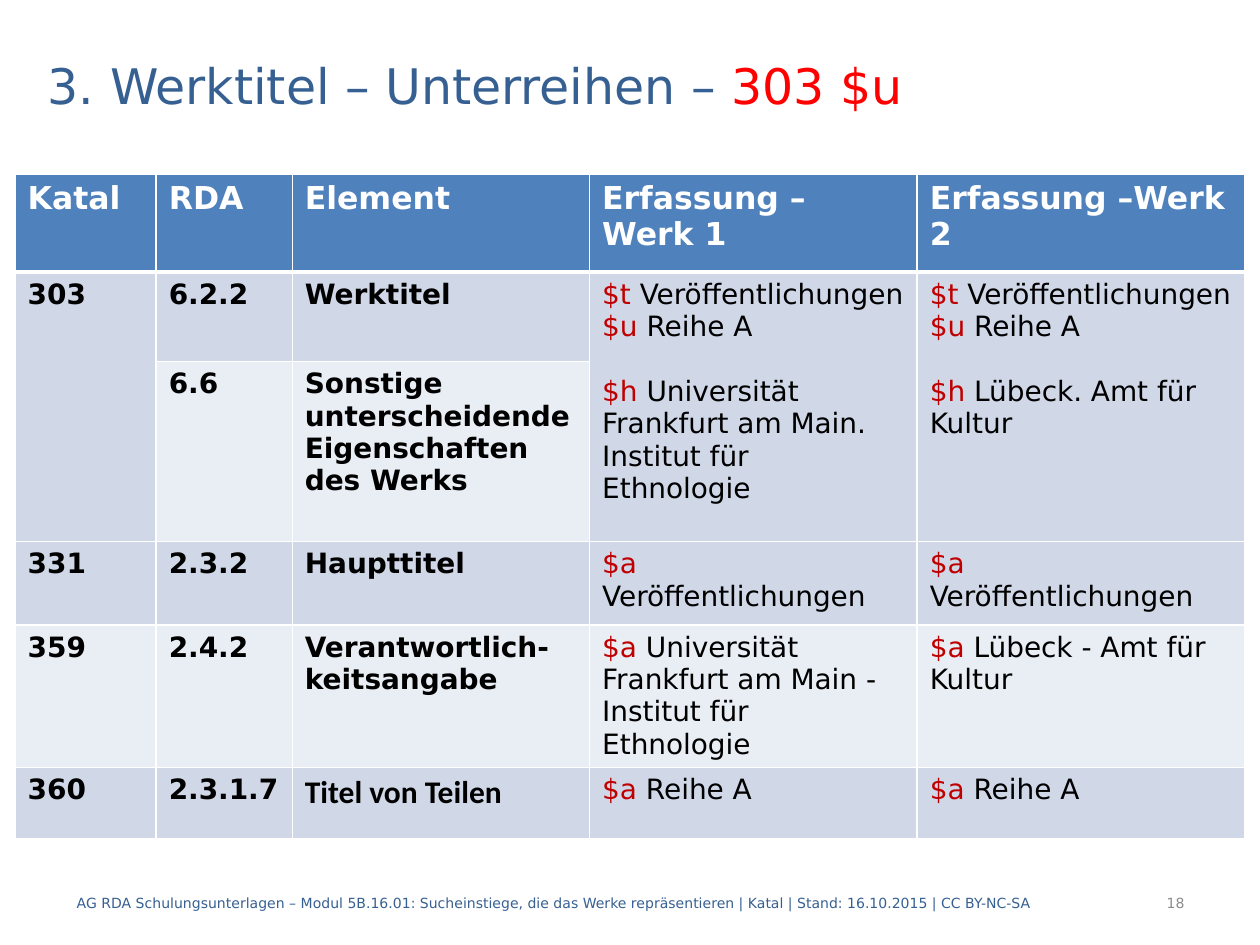
"""Build the slide on work titles with sub-series, field 303 $u."""
from lxml.etree import SubElement
from pptx import Presentation
from pptx.dml.color import RGBColor
from pptx.enum.text import MSO_ANCHOR, PP_ALIGN
from pptx.oxml.ns import qn
from pptx.util import Inches, Pt

COLORS = {
    "title": "376092", "accent": "FF0000", "number": "8C8C8C",
    "header": "4F81BD", "dark": "D0D8E8", "light": "E9EDF4",
    "white": "FFFFFF", "text": "000000", "subfield": "C00000",
}
FONT = "DejaVu Sans"
COLUMNS = [1.12, 1.08, 2.36, 2.6, 2.6]
ROWS = [0.78, 0.71, 1.43, 0.66, 1.13, 0.57]
BANDS = ["header", "dark", "light", "dark", "light", "dark"]
CELLS = [
    ["Katal", "RDA", "Element", "Erfassung –\nWerk 1", "Erfassung –Werk 2"],
    ["303", "6.2.2", "Werktitel",
     "$t Veröffentlichungen\n$u Reihe A\n$h Universität Frankfurt am Main. Institut für Ethnologie",
     "$t Veröffentlichungen\n$u Reihe A\n$h Lübeck. Amt für Kultur"],
    [None, "6.6", "Sonstige unterscheidende Eigenschaften des Werks", None, None],
    ["331", "2.3.2", "Haupttitel", "$a Veröffentlichungen", "$a Veröffentlichungen"],
    ["359", "2.4.2", "Verantwortlich-keitsangabe",
     "$a Universität Frankfurt am Main - Institut für Ethnologie", "$a Lübeck - Amt für Kultur"],
    ["360", "2.3.1.7", "Titel von Teilen", "$a Reihe A", "$a Reihe A"],
]


def add_span(para, text, size, color, bold=False, font=FONT):
    span = para.add_run()
    span.text = text
    span.font.name = font
    span.font.size = Pt(size)
    span.font.bold = bold
    span.font.color.rgb = RGBColor.from_string(COLORS[color])


def place(box, left, top, width, height):
    box.left, box.top = Inches(left), Inches(top)
    box.width, box.height = Inches(width), Inches(height)
    box.text_frame.word_wrap = True
    box.text_frame.vertical_anchor = MSO_ANCHOR.MIDDLE


deck = Presentation()
deck.slide_width, deck.slide_height = Inches(10), Inches(7.5)
page = deck.slides.add_slide(deck.slide_layouts[5])

title = page.shapes.title
place(title, 0.28, 0.36, 9.13, 0.63)
para = title.text_frame.paragraphs[0]
para.alignment = PP_ALIGN.LEFT
add_span(para, "3. Werktitel – Unterreihen – ", 28, "title")
add_span(para, "303 $u", 28, "accent")

table = page.shapes.add_table(
    len(ROWS), len(COLUMNS), Inches(0.12), Inches(1.38),
    Inches(sum(COLUMNS)), Inches(sum(ROWS))).table
for column, width in zip(table.columns, COLUMNS):
    column.width = Inches(width)
for row, height in zip(table.rows, ROWS):
    row.height = Inches(height)
for merged in (0, 3, 4):
    table.cell(1, merged).merge(table.cell(2, merged))

for row, (texts, band) in enumerate(zip(CELLS, BANDS)):
    for column, text in enumerate(texts):
        if text is None:
            continue
        cell = table.cell(row, column)
        if band == "header":
            properties = cell._tc.get_or_add_tcPr()
            border = SubElement(properties, qn("a:lnB"), w=str(Pt(3)))
            line_fill = SubElement(border, qn("a:solidFill"))
            SubElement(line_fill, qn("a:srgbClr"), val=COLORS["white"])
        cell.fill.solid()
        cell.fill.fore_color.rgb = RGBColor.from_string(COLORS[band])
        for index, line in enumerate(text.split("\n")):
            frame = cell.text_frame
            para = frame.add_paragraph() if index else frame.paragraphs[0]
            if line.startswith("$"):
                add_span(para, line[:3], 16, "subfield")
                add_span(para, line[3:], 16, "text")
                if line.startswith("$h"):
                    para.space_before = Pt(18.6)
            elif band == "header":
                add_span(para, line, 18, "white", True)
            elif line == "Titel von Teilen":
                add_span(para, line, 18, "text", True, "Calibri")
            else:
                add_span(para, line, 16, "text", True)

FOOTERS = [
    (0.51, 8.35, PP_ALIGN.LEFT, "title",
     "AG RDA Schulungsunterlagen – Modul 5B.16.01: Sucheinstiege, die das Werke "
     "repräsentieren | Katal | Stand: 16.10.2015 | CC BY-NC-SA"),
    (7.91, 1.59, PP_ALIGN.RIGHT, "number", "18"),
]
for left, width, alignment, color, text in FOOTERS:
    box = page.shapes.add_textbox(0, 0, 0, 0)
    place(box, left, 6.97, width, 0.4)
    para = box.text_frame.paragraphs[0]
    para.alignment = alignment
    add_span(para, text, 8, color)

deck.save("out.pptx")
